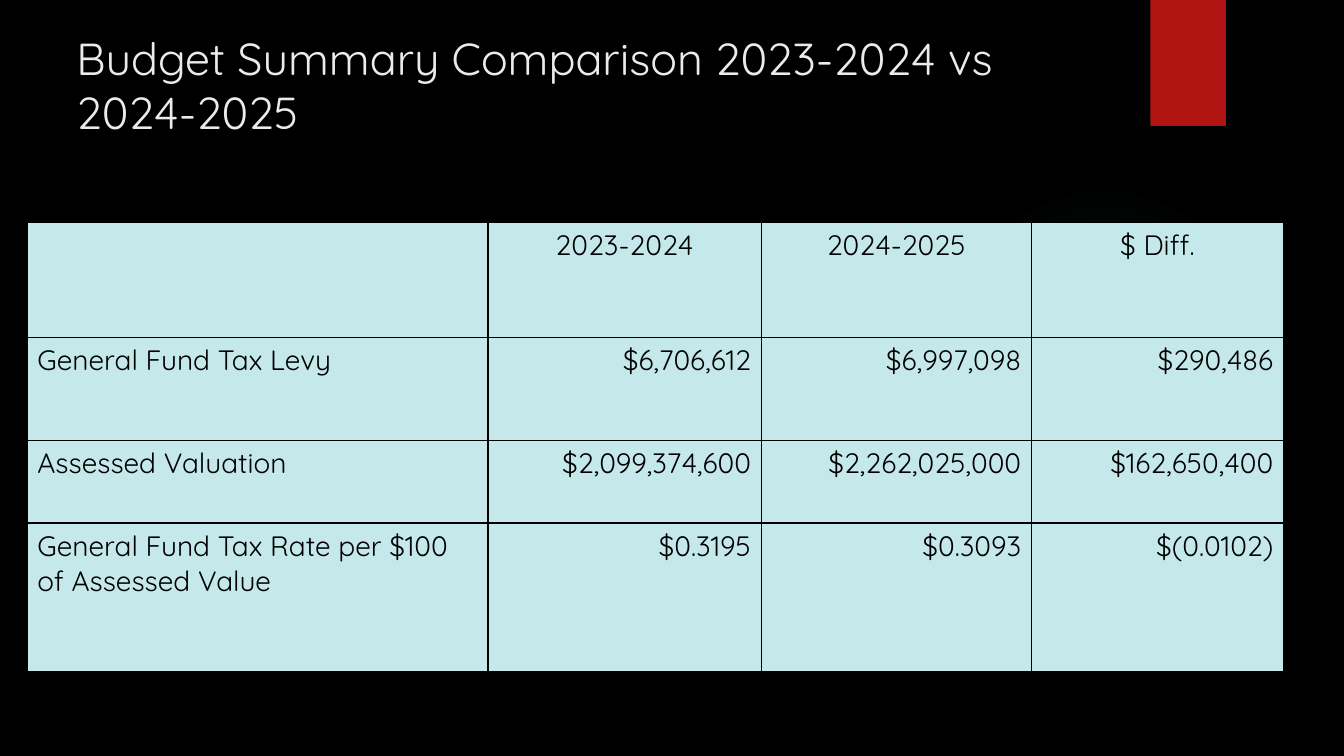
from lxml.etree import SubElement
from pptx import Presentation
from pptx.dml.color import RGBColor
from pptx.enum.shapes import MSO_SHAPE
from pptx.enum.text import MSO_ANCHOR, PP_ALIGN
from pptx.oxml import parse_xml
from pptx.oxml.ns import nsdecls, qn
from pptx.util import Inches, Pt

FONT = "Quicksand"
COLORS = {
    "background": "000000",
    "glow": "50B9C1",
    "ribbon": "B01513",
    "title": "EBEBEB",
    "cell": "C5E8EA",
    "ink": "000000",
}
GLOW_STOPS = [(0, 7), (36, 6), (69, 0)]
COLUMN_WIDTHS = [4.57, 2.71, 2.68, 2.5]
ROW_HEIGHTS = [1.14, 1.02, 0.82, 1.47]
BUDGET_ROWS = [
    ["", "2023-2024", "2024-2025", "$ Diff."],
    ["General Fund Tax Levy", "$6,706,612", "$6,997,098", "$290,486"],
    ["Assessed Valuation", "$2,099,374,600", "$2,262,025,000", "$162,650,400"],
    ["General Fund Tax Rate per $100 of Assessed Value", "$0.3195", "$0.3093", "$(0.0102)"],
]


def color(name):
    return RGBColor.from_string(COLORS[name])


def style_font(font, size, color_name):
    font.name = FONT
    font.size = Pt(size)
    font.color.rgb = color(color_name)


def add_plain_shape(slide, kind, box, color_name):
    shape = slide.shapes.add_shape(kind, *map(Inches, box))
    shape.shadow.inherit = False
    shape.fill.solid()
    shape.fill.fore_color.rgb = color(color_name)
    shape.line.fill.background()
    return shape


def add_glow(slide, box):
    shape = add_plain_shape(slide, MSO_SHAPE.OVAL, box, "glow")
    stops = "".join(
        f'<a:gs pos="{position * 1000}"><a:srgbClr val="{COLORS["glow"]}">'
        f'<a:alpha val="{opacity * 1000}"/></a:srgbClr></a:gs>'
        for position, opacity in GLOW_STOPS
    )
    gradient = parse_xml(
        f'<a:gradFill {nsdecls("a")}><a:gsLst>{stops}</a:gsLst><a:path path="circle">'
        '<a:fillToRect l="50000" t="50000" r="50000" b="50000"/></a:path></a:gradFill>'
    )
    properties = shape.element.spPr
    properties.replace(properties.find(qn("a:solidFill")), gradient)


def add_ribbon(slide, box):
    shape = add_plain_shape(slide, MSO_SHAPE.RECTANGLE, box, "ribbon")
    effects = shape.element.spPr.find(qn("a:effectLst"))
    shadow = SubElement(effects, qn("a:outerShdw"), blurRad=str(Pt(3)),
                        dist=str(Pt(2)), dir="5400000", rotWithShape="0")
    shadow_color = SubElement(shadow, qn("a:srgbClr"), val=COLORS["ink"])
    SubElement(shadow_color, qn("a:alpha"), val="45000")


def add_title(slide, box, text):
    text_frame = slide.shapes.add_textbox(*map(Inches, box)).text_frame
    text_frame.word_wrap = True
    text_frame.vertical_anchor = MSO_ANCHOR.TOP
    text_frame.text = text
    style_font(text_frame.paragraphs[0].runs[0].font, 32, "title")


def add_borders(cell):
    properties = cell._tc.get_or_add_tcPr()
    for index, side in enumerate(["lnL", "lnR", "lnT", "lnB"]):
        properties.insert(index, parse_xml(
            f'<a:{side} {nsdecls("a")} w="{Pt(1)}"><a:solidFill>'
            f'<a:srgbClr val="{COLORS["ink"]}"/></a:solidFill></a:{side}>'
        ))


def fill_cell(cell, text, alignment):
    cell.fill.solid()
    cell.fill.fore_color.rgb = color("cell")
    add_borders(cell)
    cell.text = text
    paragraph = cell.text_frame.paragraphs[0]
    paragraph.alignment = alignment
    style_font(paragraph.font, 20, "ink")
    for run in paragraph.runs:
        style_font(run.font, 20, "ink")


def add_budget_table(slide, left, top):
    table = slide.shapes.add_table(
        len(ROW_HEIGHTS), len(COLUMN_WIDTHS), Inches(left), Inches(top),
        Inches(sum(COLUMN_WIDTHS)), Inches(sum(ROW_HEIGHTS)),
    ).table
    table.first_row = False
    table.horz_banding = False
    for column, width in zip(table.columns, COLUMN_WIDTHS):
        column.width = Inches(width)
    for row, height, texts in zip(table.rows, ROW_HEIGHTS, BUDGET_ROWS):
        row.height = Inches(height)
        value_alignment = PP_ALIGN.RIGHT if texts[0] else PP_ALIGN.CENTER
        for index, (cell, text) in enumerate(zip(row.cells, texts)):
            fill_cell(cell, text, value_alignment if index else PP_ALIGN.LEFT)


def add_budget_slide(presentation):
    slide = presentation.slides.add_slide(presentation.slide_layouts[6])
    slide.background.fill.solid()
    slide.background.fill.fore_color.rgb = color("background")
    add_glow(slide, (9.41, 1.83, 3.08, 3.08))
    add_ribbon(slide, (11.41, 0, 0.75, 1.25))
    add_title(slide, (0.66, 0.26, 10.29, 1.53),
              "Budget Summary Comparison 2023-2024 vs 2024-2025")
    add_budget_table(slide, 0.27, 2.21)


def main():
    presentation = Presentation()
    presentation.slide_width = Inches(13.33)
    presentation.slide_height = Inches(7.5)
    add_budget_slide(presentation)
    presentation.save("out.pptx")


if __name__ == "__main__":
    main()
